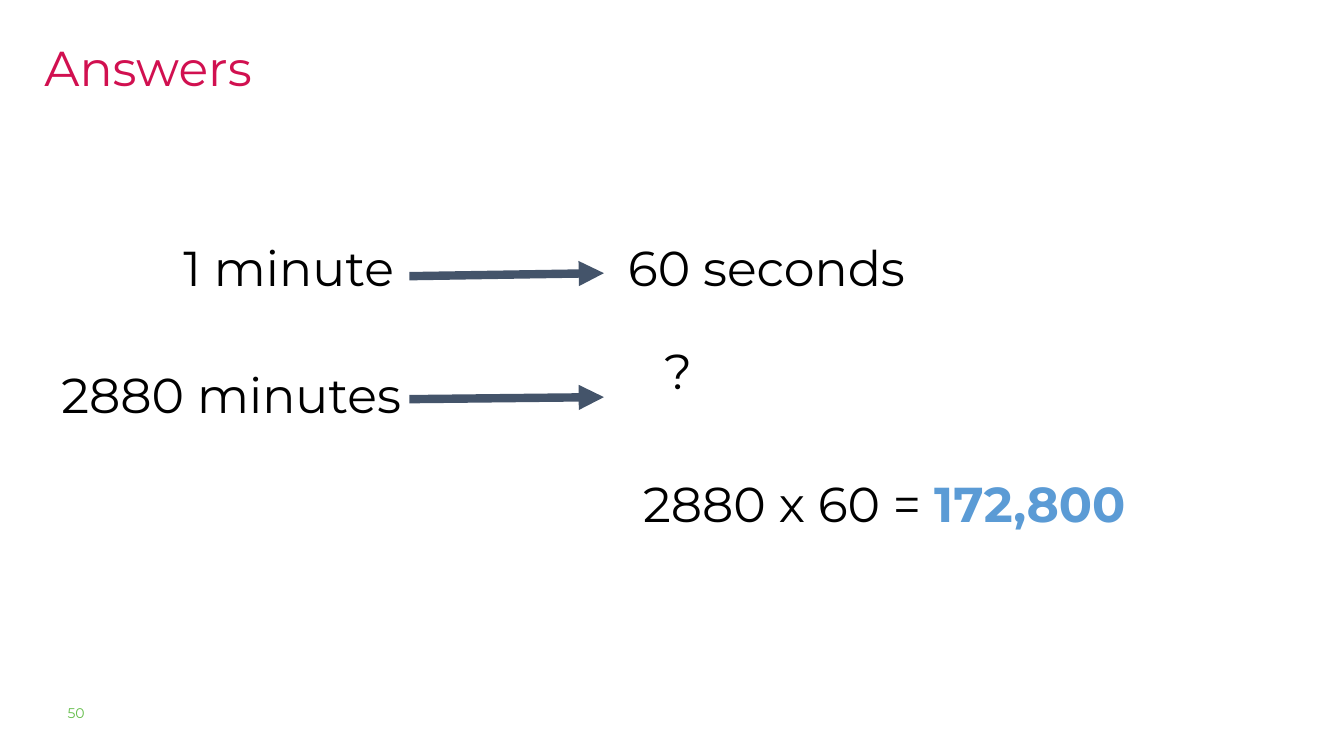
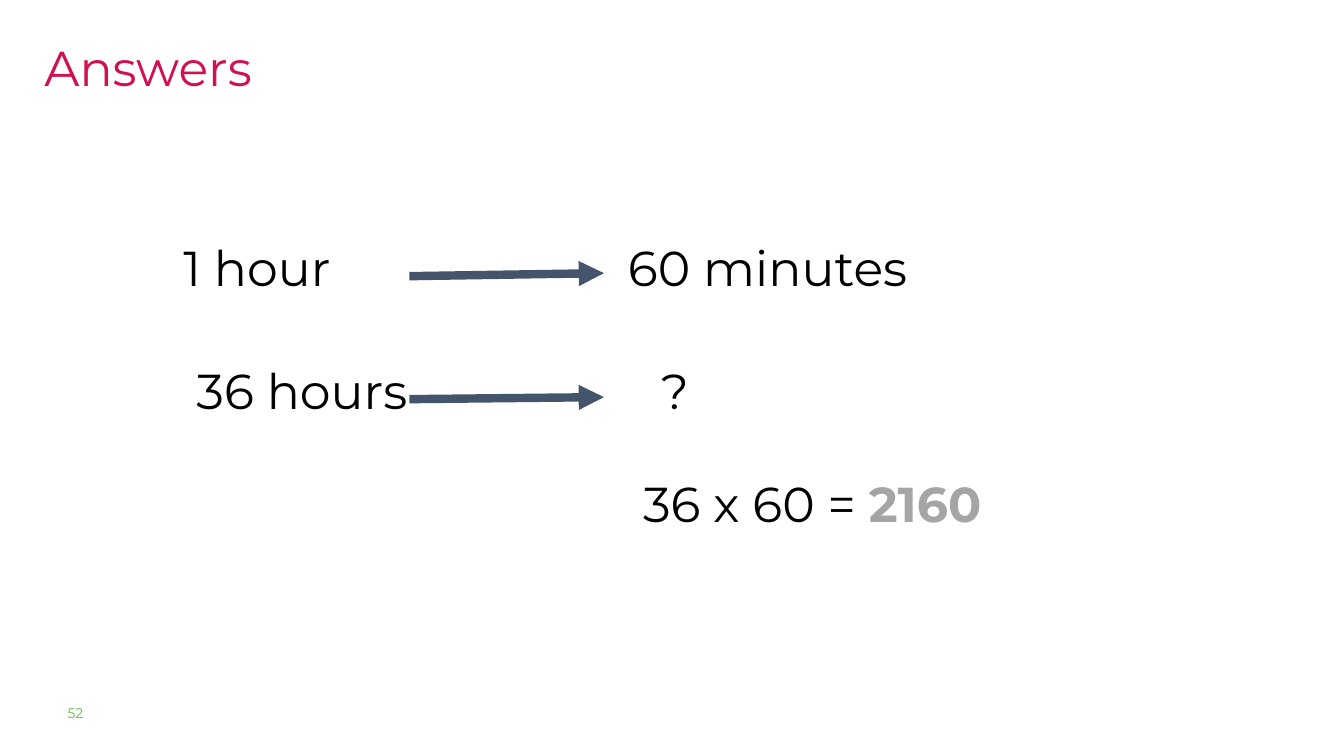
import pptx
import pptx.util
import pptx.dml.color
import pptx.enum.text
import pptx.enum.shapes
import pptx.oxml
import pptx.oxml.ns

Inches = pptx.util.Inches

# Content: each text is (words, left, top, width, height)
SLIDES = [
    {
        "number": "50",
        "texts": [
            ("1 minute", 1.72, 2.26, 2.39, 0.93),
            ("60 seconds", 6.13, 2.26, 3.06, 0.93),
            ("2880 minutes", 0.51, 3.52, 3.88, 0.93),
            ("?", 6.49, 3.28, 2.39, 0.93),
        ],
        "sum": "2880 x 60 = ",
        "result": ("172,800", "5B9BD5"),
    },
    {
        "number": "52",
        "texts": [
            ("1 hour", 1.72, 2.26, 2.39, 0.93),
            ("60 minutes", 6.13, 2.26, 3.06, 0.93),
            ("36 hours", 1.85, 3.48, 2.39, 0.93),
            ("?", 6.46, 3.48, 2.39, 0.93),
        ],
        "sum": "36 x 60 = ",
        "result": ("2160", "A5A5A5"),
    },
]

# Shared look
FONT = "Montserrat"
BLACK, TITLE_RED, NUMBER_GREEN, ARROW_SLATE = "000000", "D11050", "65BE4B", "44546A"
TITLE_BOX = (0.34, 0.15, 4.89, 0.84)
SUM_BOX = (6.28, 4.6, 5.06, 0.84)
NUMBER_BOX = (0.67, 6.99, 1.05, 0.26)
ARROW_LEFT, ARROW_RIGHT = 4.06, 5.99
ARROW_HEIGHTS = [(2.74, 2.71), (3.96, 3.94)]


def color(hex_code):
    return pptx.dml.color.RGBColor.from_string(hex_code)


def set_all(target, values):
    for name, value in values.items():
        setattr(target, name, value)


def write(shape, runs, size=35, inset_x=0.1, inset_y=0.1, line_spacing=None):
    """Fill a shape with one left-aligned line of (text, colour, bold) runs."""
    frame = shape.text_frame
    set_all(frame, {
        "word_wrap": True,
        "auto_size": pptx.enum.text.MSO_AUTO_SIZE.NONE,
        "vertical_anchor": pptx.enum.text.MSO_ANCHOR.TOP,
        "margin_left": Inches(inset_x), "margin_right": Inches(inset_x),
        "margin_top": Inches(inset_y), "margin_bottom": Inches(inset_y),
    })
    paragraph = frame.paragraphs[0]
    set_all(paragraph, {"alignment": pptx.enum.text.PP_ALIGN.LEFT,
                        "line_spacing": line_spacing})
    for text, hex_code, bold in runs:
        run = paragraph.add_run()
        run.text = text
        set_all(run.font, {"name": FONT, "size": pptx.util.Pt(size), "bold": bold})
        run.font.color.rgb = color(hex_code)


def add_text(slide, box, runs, **style):
    write(slide.shapes.add_textbox(*map(Inches, box)), runs, **style)


def add_title(slide):
    title = slide.shapes.title
    set_all(title, dict(zip(("left", "top", "width", "height"), map(Inches, TITLE_BOX))))
    write(title, [("Answers", TITLE_RED, False)], inset_y=0.05, line_spacing=1.3)


def add_arrow(slide, start_y, end_y):
    ends = map(Inches, (ARROW_LEFT, start_y, ARROW_RIGHT, end_y))
    arrow = slide.shapes.add_connector(pptx.enum.shapes.MSO_CONNECTOR.STRAIGHT, *ends)
    arrow.line.color.rgb = color(ARROW_SLATE)
    arrow.line.width = pptx.util.Pt(6)
    head = pptx.oxml.parse_xml(
        f'<a:tailEnd {pptx.oxml.ns.nsdecls("a")} type="triangle"/>')
    arrow.line._get_or_add_ln().append(head)
    arrow._element.spPr.append(
        pptx.oxml.parse_xml(f'<a:effectLst {pptx.oxml.ns.nsdecls("a")}/>'))


def add_answer_slide(presentation, content):
    slide = presentation.slides.add_slide(
        presentation.slide_layouts.get_by_name("Title Only"))
    add_title(slide)

    # Conversion rows
    for words, *box in content["texts"]:
        add_text(slide, box, [(words, BLACK, False)])
    for heights in ARROW_HEIGHTS:
        add_arrow(slide, *heights)

    # Calculation and page number
    add_text(slide, SUM_BOX, [(content["sum"], BLACK, False), (*content["result"], True)])
    add_text(slide, NUMBER_BOX, [(content["number"], NUMBER_GREEN, False)],
             size=10, inset_x=0, inset_y=0)


def main():
    presentation = pptx.Presentation()
    set_all(presentation, {"slide_width": Inches(13.33), "slide_height": Inches(7.5)})
    for content in SLIDES:
        add_answer_slide(presentation, content)
    presentation.save("out.pptx")


if __name__ == "__main__":
    main()
